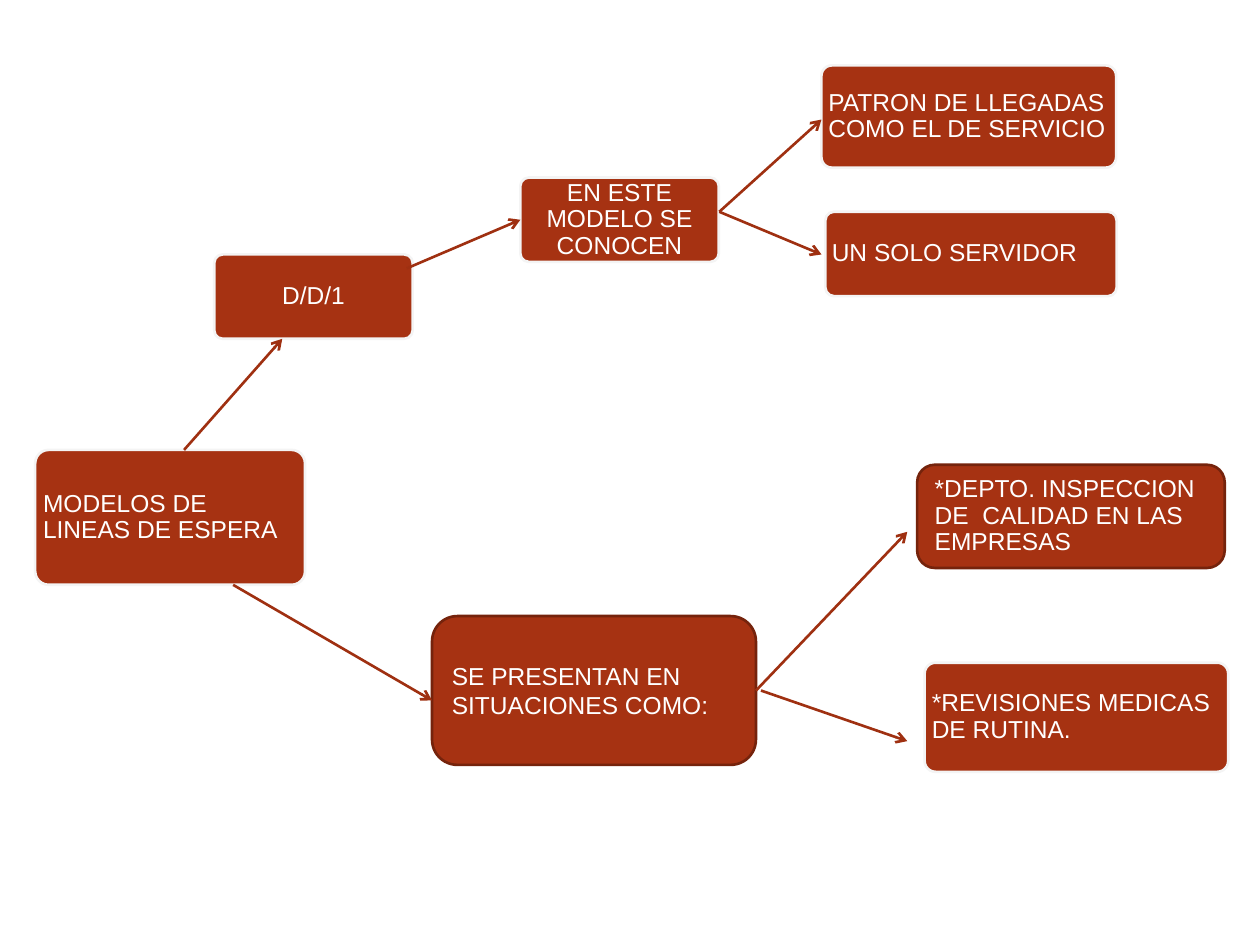
from lxml import etree
from pptx import Presentation
from pptx.dml.color import RGBColor
from pptx.enum.shapes import MSO_CONNECTOR, MSO_SHAPE
from pptx.enum.text import MSO_ANCHOR, PP_ALIGN
from pptx.oxml.ns import qn
from pptx.util import Cm, Pt

COLORS = {"box": "A63212", "pale": "F4F4F4", "dark": "75230C",
          "arrow": "9F3011", "text": "FFFFFF"}

# Box style: outline colour, corner radius, side margin and top margin in cm
PALE = ("pale", 0.1, 0.08, 0.08)
DARK = ("dark", 0.17, 0.25, 0.13)

# name: (text, (left, top, width, height) in cm, style, text format)
BOXES = {
    "models": ("MODELOS DE LINEAS DE ESPERA", (0.71, 9.07, 5.44, 2.72), PALE, {}),
    "dd1": ("D/D/1", (4.32, 5.13, 4, 1.7), PALE, {"align": PP_ALIGN.CENTER}),
    "known": ("EN ESTE MODELO SE CONOCEN", (10.49, 3.58, 4, 1.7), PALE,
              {"align": PP_ALIGN.CENTER}),
    "pattern": ("PATRON DE LLEGADAS COMO EL DE SERVICIO",
                (16.56, 1.32, 5.94, 2.06), PALE, {}),
    "server": ("UN SOLO SERVIDOR", (16.64, 4.27, 5.87, 1.7), PALE, {}),
    "checkups": ("*REVISIONES MEDICAS DE RUTINA.",
                 (18.64, 13.36, 6.12, 2.2), PALE, {}),
    "inspection": ("*DEPTO. INSPECCION DE  CALIDAD EN LAS EMPRESAS",
                   (18.49, 9.37, 6.2, 2.08), DARK, {}),
    "situations": ("SE PRESENTAN EN SITUACIONES COMO:",
                   (8.71, 12.42, 6.53, 3), DARK, {"spacing": 1.0}),
}

LEFT_SIDE, RIGHT_SIDE = 1, 3
# start, end in cm, then the box sides joined at the start and at the end
ARROWS = [
    ((3.71, 9.07), (5.69, 6.83), None, None),
    ((14.5, 4.27), (16.56, 2.41), None, None),
    ((14.5, 4.27), (16.56, 5.13), None, None),
    ((8.2, 5.41), (10.49, 4.43), None, ("known", LEFT_SIDE)),
    ((4.7, 11.79), (8.71, 14.12), None, None),
    ((15.24, 13.92), (18.29, 10.72), ("situations", RIGHT_SIDE), None),
    ((15.34, 13.92), (18.29, 14.94), None, None),
]


def color(name):
    return RGBColor.from_string(COLORS[name])


def write(frame, text, size=14, align=PP_ALIGN.LEFT, spacing=0.9):
    frame.word_wrap = True
    frame.vertical_anchor = MSO_ANCHOR.MIDDLE
    paragraph = frame.paragraphs[0]
    paragraph.alignment = align
    paragraph.line_spacing = spacing
    run = paragraph.add_run()
    run.text = text
    run.font.name = "Arial"
    run.font.size = Pt(size)
    run.font.color.rgb = color("text")


def add_box(slide, text, place, style, text_format):
    outline, radius, side, top = style
    box = slide.shapes.add_shape(MSO_SHAPE.ROUNDED_RECTANGLE, *map(Cm, place))
    box.adjustments[0] = radius
    box.shadow.inherit = False
    box.fill.solid()
    box.fill.fore_color.rgb = color("box")
    box.line.color.rgb = color(outline)
    box.line.width = Pt(1.5)
    frame = box.text_frame
    frame.margin_left = frame.margin_right = Cm(side)
    frame.margin_top = frame.margin_bottom = Cm(top)
    write(frame, text, **text_format)
    return box


def add_arrow(slide, boxes, start, end, start_joint, end_joint):
    arrow = slide.shapes.add_connector(MSO_CONNECTOR.STRAIGHT,
                                       *map(Cm, start + end))
    if start_joint:
        name, side = start_joint
        arrow.begin_connect(boxes[name], side)
    if end_joint:
        name, side = end_joint
        arrow.end_connect(boxes[name], side)
    arrow.line.color.rgb = color("arrow")
    arrow.line.width = Pt(1.5)
    etree.SubElement(arrow.line._get_or_add_ln(), qn("a:tailEnd"), type="arrow")
    etree.SubElement(arrow._element.spPr, qn("a:effectLst"))


def main():
    deck = Presentation()
    deck.slide_width, deck.slide_height = Cm(25.4), Cm(19.05)
    slide = deck.slides.add_slide(deck.slide_layouts[6])
    boxes = {name: add_box(slide, *box) for name, box in BOXES.items()}
    for arrow in ARROWS:
        add_arrow(slide, boxes, *arrow)
    deck.save("out.pptx")


if __name__ == "__main__":
    main()
